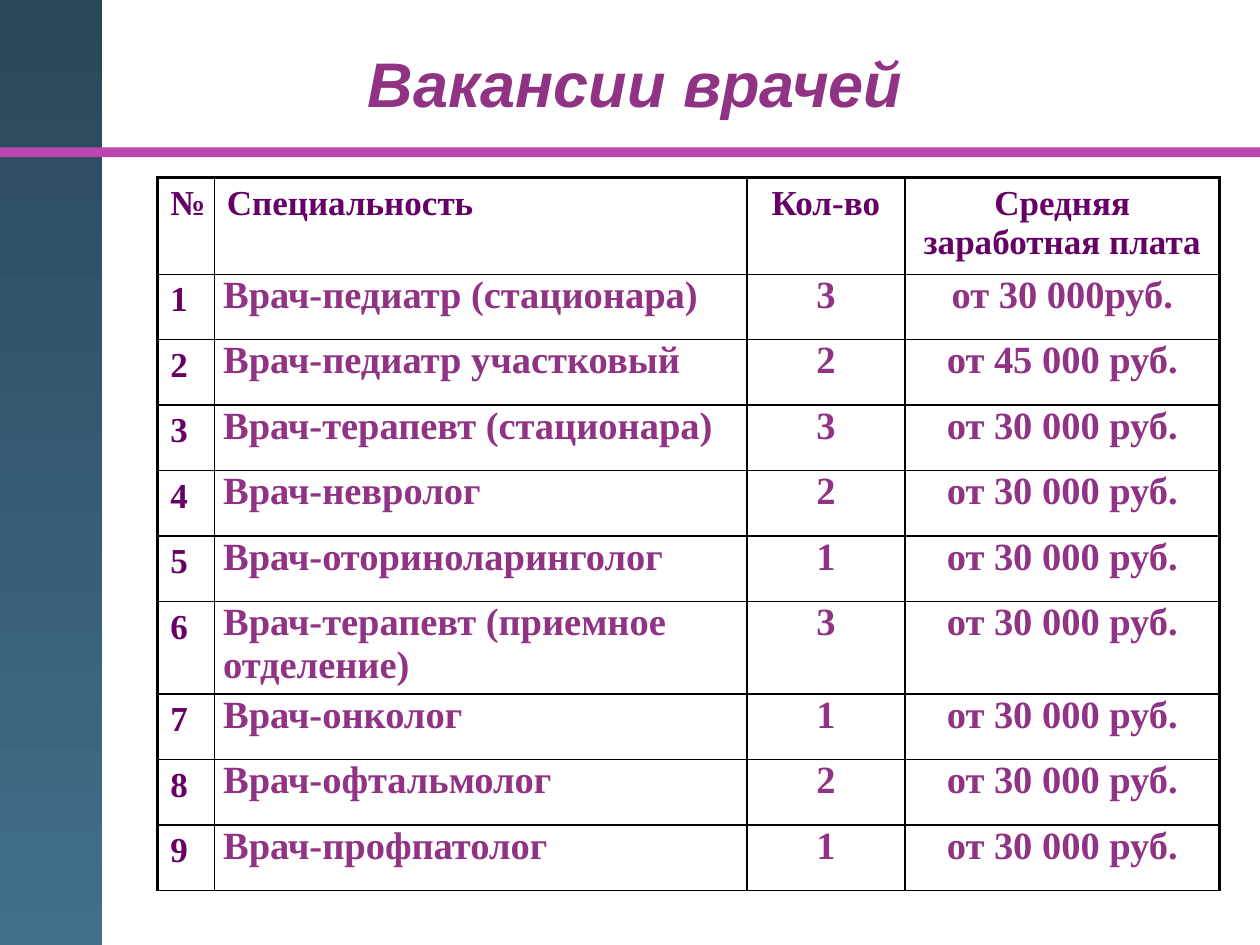
"""Build a slide with a table of vacancies for doctors."""
from lxml.etree import SubElement
from pptx import Presentation
from pptx.dml.color import RGBColor
from pptx.enum.shapes import MSO_SHAPE
from pptx.enum.text import MSO_ANCHOR, PP_ALIGN
from pptx.oxml.ns import qn
from pptx.util import Cm, Pt

COLOURS = {
    "band top": "2B475A",
    "band bottom": "416F8B",
    "stripe": "BE46B0",
    "title": "903385",
    "header": "660066",
    "border": "000000",
}
HEADINGS = ["№", "Специальность", "Кол-во", "Средняя заработная плата"]
VACANCIES = [
    ("Врач-педиатр (стационара)", "3", "от 30 000руб."),
    ("Врач-педиатр участковый", "2", "от 45 000 руб."),
    ("Врач-терапевт (стационара)", "3", "от 30 000 руб."),
    ("Врач-невролог", "2", "от 30 000 руб."),
    ("Врач-оториноларинголог", "1", "от 30 000 руб."),
    ("Врач-терапевт (приемное отделение)", "3", "от 30 000 руб."),
    ("Врач-онколог", "1", "от 30 000 руб."),
    ("Врач-офтальмолог", "2", "от 30 000 руб."),
    ("Врач-профпатолог", "1", "от 30 000 руб."),
]
COLUMN_WIDTHS = [1.14, 10.74, 3.18, 6.35]
ROW_HEIGHTS = [1.83] + [1.32] * 5 + [1.72] + [1.32] * 3


def add_span(para, text, size, font_name, colour):
    span = para.add_run()
    span.text = text
    span.font.size = Pt(size)
    span.font.name = font_name
    span.font.bold = True
    span.font.color.rgb = RGBColor.from_string(COLOURS[colour])
    return span


def add_border(cell, side, width):
    line = SubElement(cell._tc.get_or_add_tcPr(), qn(f"a:ln{side}"), w=str(Pt(width)))
    fill = SubElement(line, qn("a:solidFill"))
    SubElement(fill, qn("a:srgbClr"), val=COLOURS["border"])


deck = Presentation()
deck.slide_width = Cm(25.4)
deck.slide_height = Cm(19.05)
page = deck.slides.add_slide(deck.slide_layouts[6])

band = page.shapes.add_shape(MSO_SHAPE.RECTANGLE, Cm(0), Cm(0), Cm(2.06), Cm(19.05))
band.fill.gradient()
band.fill.gradient_angle = 270
for stop, name in zip(band.fill.gradient_stops, ["band top", "band bottom"]):
    stop.color.rgb = RGBColor.from_string(COLOURS[name])

stripe = page.shapes.add_shape(MSO_SHAPE.RECTANGLE, Cm(0), Cm(2.97), Cm(25.4), Cm(0.2))
stripe.fill.solid()
stripe.fill.fore_color.rgb = RGBColor.from_string(COLOURS["stripe"])

for shape in (band, stripe):
    shape.line.fill.background()
    shape.shadow.inherit = False

box = page.shapes.add_textbox(Cm(1.5), Cm(0.58), Cm(22.61), Cm(2.18))
box.text_frame.word_wrap = True
box.text_frame.vertical_anchor = MSO_ANCHOR.MIDDLE
para = box.text_frame.paragraphs[0]
para.alignment = PP_ALIGN.CENTER
add_span(para, "Вакансии врачей", 36, "Arial", "title").font.italic = True

rows = [HEADINGS]
for number, vacancy in enumerate(VACANCIES, 1):
    rows.append([str(number), *vacancy])

table = page.shapes.add_table(
    len(rows), len(HEADINGS), Cm(3.18), Cm(3.58),
    Cm(sum(COLUMN_WIDTHS)), Cm(sum(ROW_HEIGHTS)),
).table
table.first_row = False
table.horz_banding = False
for column, width in zip(table.columns, COLUMN_WIDTHS):
    column.width = Cm(width)
for row, height in zip(table.rows, ROW_HEIGHTS):
    row.height = Cm(height)

for row_index, texts in enumerate(rows):
    for column_index, text in enumerate(texts):
        cell = table.cell(row_index, column_index)
        add_border(cell, "L", 2.25 if column_index == 0 else 1)
        add_border(cell, "R", 2.25 if column_index == len(HEADINGS) - 1 else 1)
        add_border(cell, "T", 2.25 if row_index == 0 else 1)
        add_border(cell, "B", 1)
        cell.fill.background()
        para = cell.text_frame.paragraphs[0]
        para.alignment = PP_ALIGN.CENTER if column_index > 1 else PP_ALIGN.LEFT
        if row_index == 0 or column_index == 0:
            add_span(para, text, 20, "Times New Roman", "header")
        else:
            cell.margin_left = cell.margin_right = Cm(0.18)
            cell.margin_top = cell.margin_bottom = Cm(0)
            add_span(para, text, 22, "Times New Roman", "title")

deck.save("out.pptx")
